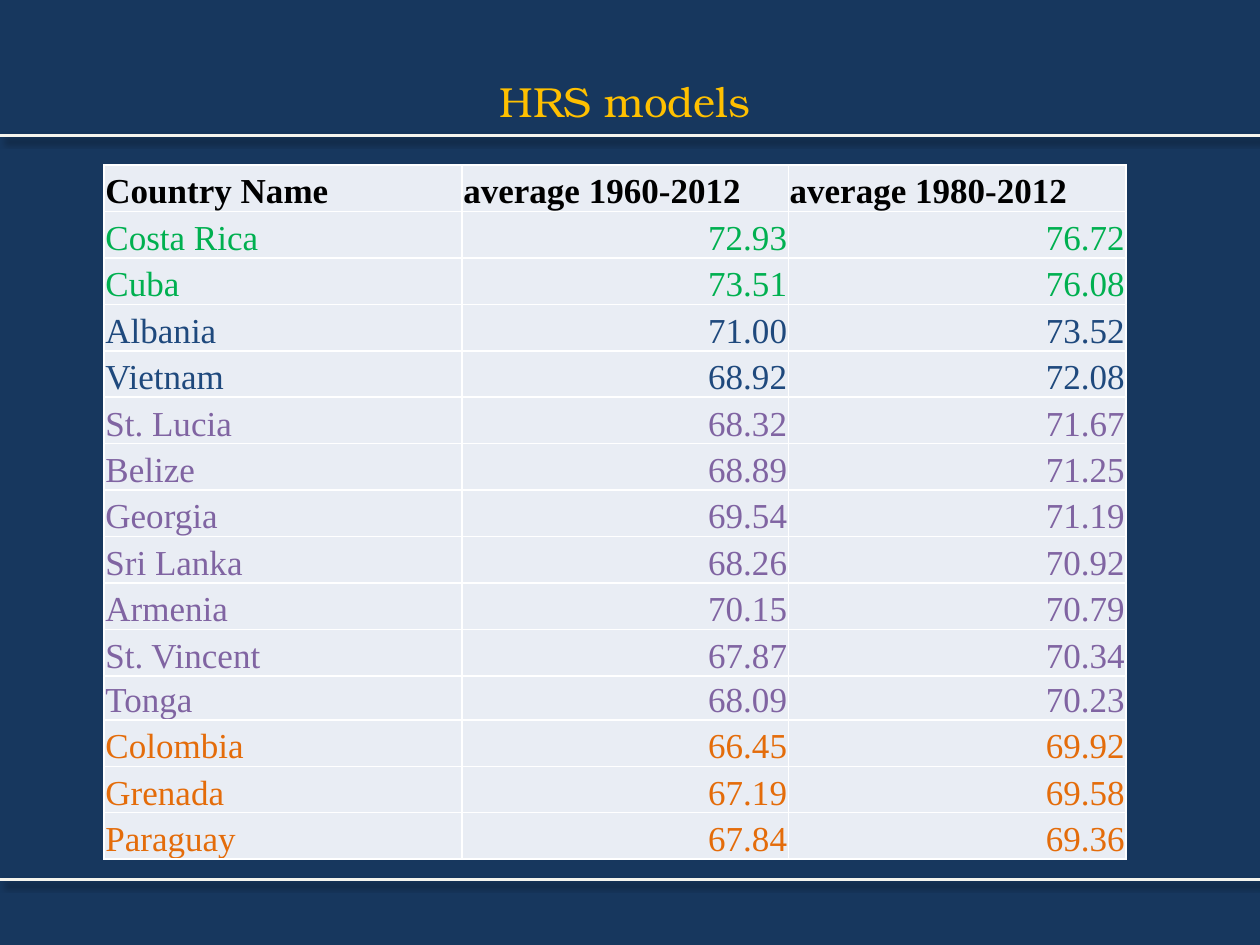
from lxml.etree import SubElement
from pptx import Presentation
from pptx.dml.color import RGBColor
from pptx.enum.shapes import MSO_CONNECTOR
from pptx.enum.text import MSO_ANCHOR as ANCHOR, PP_ALIGN as ALIGN
from pptx.oxml import parse_xml
from pptx.oxml.ns import nsdecls, qn
from pptx.util import Pt

NAVY = RGBColor(0x17, 0x37, 0x5E)
IVORY = RGBColor(0xF5, 0xF4, 0xED)
GOLD = RGBColor(0xFF, 0xC0, 0x00)
PALE = RGBColor(0xE9, 0xED, 0xF4)
BLACK = RGBColor(0x00, 0x00, 0x00)
GREEN = RGBColor(0x00, 0xB0, 0x50)
BLUE = RGBColor(0x1F, 0x49, 0x7D)
PURPLE = RGBColor(0x80, 0x64, 0xA2)
ORANGE = RGBColor(0xE4, 0x6C, 0x0A)

SHADOW = f"""<a:effectLst {nsdecls('a')}>
<a:outerShdw blurRad="{Pt(4)}" dist="{Pt(4)}" dir="2400000" algn="tl" rotWithShape="0">
<a:srgbClr val="000000"><a:alpha val="40000"/></a:srgbClr></a:outerShdw></a:effectLst>"""

ROWS = [
    ("Country Name", "average 1960-2012", "average 1980-2012", BLACK),
    ("Costa Rica", "72.93", "76.72", GREEN),
    ("Cuba", "73.51", "76.08", GREEN),
    ("Albania", "71.00", "73.52", BLUE),
    ("Vietnam", "68.92", "72.08", BLUE),
    ("St. Lucia", "68.32", "71.67", PURPLE),
    ("Belize", "68.89", "71.25", PURPLE),
    ("Georgia", "69.54", "71.19", PURPLE),
    ("Sri Lanka", "68.26", "70.92", PURPLE),
    ("Armenia", "70.15", "70.79", PURPLE),
    ("St. Vincent", "67.87", "70.34", PURPLE),
    ("Tonga", "68.09", "70.23", PURPLE),
    ("Colombia", "66.45", "69.92", ORANGE),
    ("Grenada", "67.19", "69.58", ORANGE),
    ("Paraguay", "67.84", "69.36", ORANGE),
]
COL_WIDTHS = [204.5, 186.5, 193]
ROW_HEIGHT = 26.54


def write(tf, text, size, color, font="Times New Roman", bold=False, align=ALIGN.LEFT):
    p = tf.paragraphs[0]
    p.alignment = align
    r = p.add_run()
    r.text = text
    r.font.name = font
    r.font.size = Pt(size)
    r.font.bold = bold
    r.font.color.rgb = color


def add_borders(cell):
    tcPr = cell._tc.get_or_add_tcPr()
    for side in ("lnL", "lnR", "lnT", "lnB"):
        ln = SubElement(tcPr, qn(f"a:{side}"), w=str(Pt(1)))
        SubElement(SubElement(ln, qn("a:solidFill")), qn("a:srgbClr"), val="FFFFFF")


prs = Presentation()
prs.slide_width, prs.slide_height = Pt(720), Pt(540)
s = prs.slides.add_slide(prs.slide_layouts[6])
s.background.fill.solid()
s.background.fill.fore_color.rgb = NAVY

for y in (502.5, 77.2):
    rule = s.shapes.add_connector(MSO_CONNECTOR.STRAIGHT, 0, Pt(y), Pt(720), Pt(y))
    rule.line.color.rgb = IVORY
    rule.line.width = Pt(1.75)
    rule._element.spPr.append(parse_xml(SHADOW))

title = s.shapes.add_textbox(Pt(36.5), Pt(26), Pt(641), Pt(62.5))
tf = title.text_frame
tf.word_wrap = True
tf.vertical_anchor = ANCHOR.MIDDLE
write(tf, "HRS models", 24, GOLD, font="TeX Gyre Bonum", align=ALIGN.CENTER)

frame = s.shapes.add_table(len(ROWS), len(COL_WIDTHS), Pt(59.5), Pt(94.3),
                           Pt(sum(COL_WIDTHS)), Pt(396.8))
table = frame.table
table.first_row = table.horz_banding = False
for col, width in zip(table.columns, COL_WIDTHS):
    col.width = Pt(width)

for i, (*texts, color) in enumerate(ROWS):
    table.rows[i].height = Pt(25.2 if texts[0] == "Tonga" else ROW_HEIGHT)
    for j, text in enumerate(texts):
        cell = table.cell(i, j)
        cell.margin_left = cell.margin_right = cell.margin_top = Pt(0.75)
        cell.margin_bottom = 0
        cell.vertical_anchor = ANCHOR.BOTTOM
        add_borders(cell)
        cell.fill.solid()
        cell.fill.fore_color.rgb = PALE
        align = ALIGN.RIGHT if i and j else ALIGN.LEFT
        write(cell.text_frame, text, 20, color, bold=i == 0, align=align)

prs.save("out.pptx")
